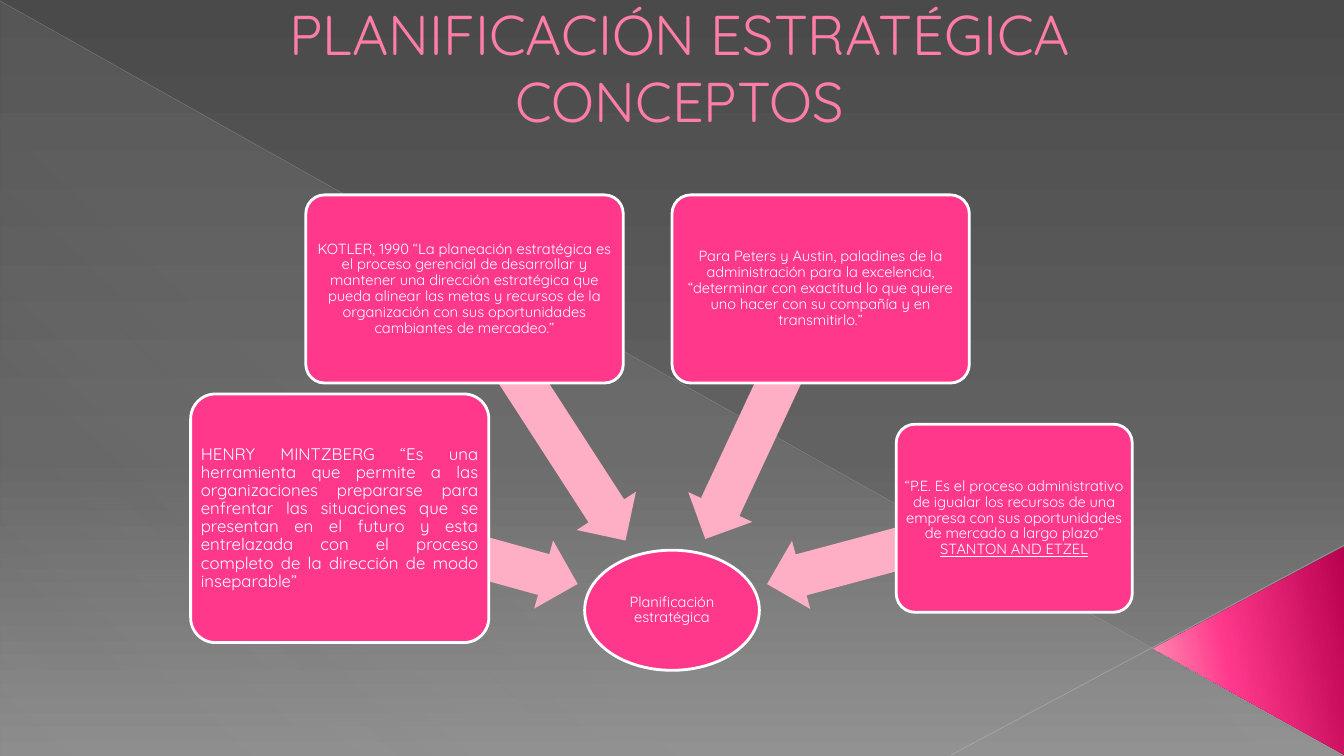
"""Build a slide of four strategic planning definitions that point to one hub."""
from dataclasses import dataclass
from typing import Any

from lxml import etree
from pptx import Presentation
from pptx.dml.color import RGBColor
from pptx.enum.shapes import MSO_CONNECTOR, MSO_SHAPE
from pptx.enum.text import MSO_ANCHOR, PP_ALIGN
from pptx.oxml.ns import qn
from pptx.util import Emu, Inches, Pt

RIGHT_TRIANGLE = MSO_SHAPE.RIGHT_TRIANGLE
TRIANGLE = MSO_SHAPE.ISOSCELES_TRIANGLE
ROUNDED = MSO_SHAPE.ROUNDED_RECTANGLE
OVAL = MSO_SHAPE.OVAL
LEFT_ARROW = MSO_SHAPE.LEFT_ARROW
STRAIGHT = MSO_CONNECTOR.STRAIGHT
MIDDLE = MSO_ANCHOR.MIDDLE
CENTER = PP_ALIGN.CENTER
JUSTIFY = PP_ALIGN.JUSTIFY

CELL = Inches(1 / 12)
COLUMNS, ROWS = 160, 90


@dataclass(frozen=True)
class Stop:
    position: int
    color: str
    opacity: int = 100


@dataclass(frozen=True)
class Theme:
    font: str = "Quicksand"
    title_size: float = 40
    large_size: float = 12
    body_size: float = 10.5
    title: str = "FF7DA7"
    title_edge: str = "B12761"
    box: str = "FF388C"
    arrow: str = "FFAFC5"
    white: str = "FFFFFF"
    edge_width: float = 2
    backdrop: tuple[Stop, ...] = (Stop(0, "4A4A4A"), Stop(60, "626262"), Stop(100, "8C8C8C"))
    veil: tuple[Stop, ...] = (Stop(0, "D2D2D2", 10), Stop(70, "D2D2D2", 8), Stop(100, "D2D2D2", 1))
    corner: tuple[Stop, ...] = (Stop(0, "B8014E"), Stop(60, "FF388C"), Stop(100, "FF9CB9"))


@dataclass(frozen=True)
class Place:
    column: float
    row: float
    width: float
    height: float
    turn: float = 0

    def frame(self) -> tuple[Emu, Emu, Emu, Emu]:
        """Return left, top, width and height as lengths."""
        return cells(self.column), cells(self.row), cells(self.width), cells(self.height)


@dataclass(frozen=True)
class Ray:
    start: tuple[float, float]
    end: tuple[float, float]
    color: str
    width: float
    opacity: int


@dataclass(frozen=True)
class Concept:
    arrow: Place
    box: Place
    text: str
    source: str = ""
    size: float = Theme.body_size
    align: PP_ALIGN = CENTER
    inset: float = 0.02


THEME = Theme()
TITLE = Place(26.2, -4.1, 103.1, 24)
HUB = Place(69.6, 65.5, 20.8, 14.3)
VEIL = Place(0.1, 0.2, 159.7, 89.8)
CORNER = Place(136.3, 66.1, 24.8, 22.7, 270)
RAYS = (
    Ray((0, 0.1), (159.8, 89.9), "BFBFBF", 0.39, 35),
    Ray((160, 64.9), (113.2, 89.9), "C6C6C6", 0.47, 45),
)
CONCEPTS = (
    Concept(
        Place(40, 61.4, 29.3, 8.4, 195.5), Place(22.7, 46.9, 35.5, 29.6),
        "HENRY MINTZBERG “Es una herramienta que permite a las organizaciones prepararse para "
        "enfrentar las situaciones que se presentan en el futuro y esta entrelazada con el "
        "proceso completo de la dirección de modo inseparable”",
        size=THEME.large_size, align=JUSTIFY, inset=0.03),
    Concept(
        Place(47, 45.2, 35.6, 8.4, 237.1), Place(36.4, 23.2, 37.8, 22.4),
        "KOTLER, 1990 “La planeación estratégica es el proceso gerencial de desarrollar y "
        "mantener una dirección estratégica que pueda alinear las metas y recursos de la "
        "organización con sus oportunidades cambiantes de mercadeo.”"),
    Concept(
        Place(74.5, 45.1, 32.8, 8.4, 295), Place(80, 23.2, 35.4, 22.4),
        "Para Peters y Austin, paladines de la administración para la excelencia, “determinar "
        "con exactitud lo que quiere uno hacer con su compañía y en transmitirlo.”"),
    Concept(
        Place(90.8, 61.4, 30.4, 8.4, 345), Place(106.7, 50.5, 28.1, 22.4),
        "“P.E. Es el proceso administrativo de igualar los recursos de una empresa con sus "
        "oportunidades de mercado a largo plazo” ",
        source="STANTON AND ETZEL"),
)


def cells(count: float) -> Emu:
    """Turn a number of grid cells into a length."""
    return Emu(round(count * CELL))


def set_opacity(color: Any, percent: int) -> None:
    """Add an opacity to a colour element."""
    etree.SubElement(color, qn("a:alpha"), val=str(percent * 1000))


def paint_gradient(fill: Any, holder: Any, stops: tuple[Stop, ...], angle: float) -> None:
    """Fill with a linear gradient whose angle runs clockwise."""
    fill.gradient()
    fill.gradient_angle = 360 - angle
    stop_list = next(holder.iter(qn("a:gsLst")))
    for old_stop in list(stop_list):
        stop_list.remove(old_stop)
    for stop in stops:
        item = etree.SubElement(stop_list, qn("a:gs"), pos=str(stop.position * 1000))
        color = etree.SubElement(item, qn("a:srgbClr"), val=stop.color)
        if stop.opacity < 100:
            set_opacity(color, stop.opacity)


def add_figure(page: Any, kind: MSO_SHAPE, place: Place, *, fill: str = "", edge: str = "",
               adjust: tuple[float, ...] = ()) -> Any:
    """Draw a preset shape without a shadow."""
    figure = page.shapes.add_shape(kind, *place.frame())
    figure.shadow.inherit = False
    figure.rotation = place.turn
    for index, value in enumerate(adjust):
        figure.adjustments[index] = value
    if fill:
        figure.fill.solid()
        figure.fill.fore_color.rgb = RGBColor.from_string(fill)
    if edge:
        figure.line.color.rgb = RGBColor.from_string(edge)
        figure.line.width = Pt(THEME.edge_width)
    else:
        figure.line.fill.background()
    return figure


def add_ray(page: Any, ray: Ray) -> None:
    """Draw a translucent background line."""
    line = page.shapes.add_connector(STRAIGHT, *map(cells, ray.start + ray.end))
    line.line.color.rgb = RGBColor.from_string(ray.color)
    line.line.width = Pt(ray.width)
    set_opacity(next(line.element.iter(qn("a:srgbClr"))), ray.opacity)
    etree.SubElement(line.element.spPr, qn("a:effectLst"))


def write_text(box: Any, text: str, *, size: float, color: str = THEME.white, source: str = "",
               align: PP_ALIGN = CENTER, inset: float = 0.01, spacing: float = 0.9) -> Any:
    """Write one paragraph with an optional underlined source and return it."""
    frame = box.text_frame
    frame.word_wrap = True
    frame.vertical_anchor = MIDDLE
    frame.margin_left = frame.margin_right = frame.margin_top = frame.margin_bottom = Inches(inset)
    para = frame.paragraphs[0]
    para.alignment = align
    para.line_spacing = spacing
    for part in filter(None, (text, source)):
        span = para.add_run()
        span.text = part
        span.font.name = THEME.font
        span.font.size = Pt(size)
        span.font.color.rgb = RGBColor.from_string(color)
        if part == source:
            span.font.underline = True
    return para


def add_title(page: Any) -> None:
    """Write the outlined slide title."""
    box = page.shapes.add_textbox(*TITLE.frame())
    para = write_text(box, "PLANIFICACIÓN ESTRATÉGICA CONCEPTOS", size=THEME.title_size,
                      color=THEME.title, inset=0.1, spacing=1.0)
    para._p.get_or_add_pPr().set("marL", str(Inches(0.53)))
    para.runs[0].font._element.insert(0, etree.Element(qn("a:ln"), w=str(Pt(0.5))))
    outline = etree.SubElement(para.runs[0].font._element[0], qn("a:solidFill"))
    etree.SubElement(outline, qn("a:srgbClr"), val=THEME.title_edge)


def main() -> None:
    """Build and save the deck."""
    deck = Presentation()
    deck.slide_width, deck.slide_height = cells(COLUMNS), cells(ROWS)
    page = deck.slides.add_slide(deck.slide_layouts[6])
    paint_gradient(page.background.fill, page.element, THEME.backdrop, 90)
    veil = add_figure(page, RIGHT_TRIANGLE, VEIL)
    paint_gradient(veil.fill, veil.element, THEME.veil, 133)
    for ray in RAYS:
        add_ray(page, ray)
    corner = add_figure(page, TRIANGLE, CORNER, adjust=(0.51,))
    paint_gradient(corner.fill, corner.element, THEME.corner, 258)
    add_title(page)
    hub = add_figure(page, OVAL, HUB, fill=THEME.box, edge=THEME.white)
    write_text(hub, "Planificación estratégica", size=THEME.body_size)
    for concept in CONCEPTS:
        add_figure(page, LEFT_ARROW, concept.arrow, fill=THEME.arrow, adjust=(0.6, 0.5))
        box = add_figure(page, ROUNDED, concept.box, fill=THEME.box, edge=THEME.white, adjust=(0.1,))
        write_text(box, concept.text, size=concept.size, source=concept.source,
                   align=concept.align, inset=concept.inset)
    deck.save("out.pptx")


if __name__ == "__main__":
    main()
